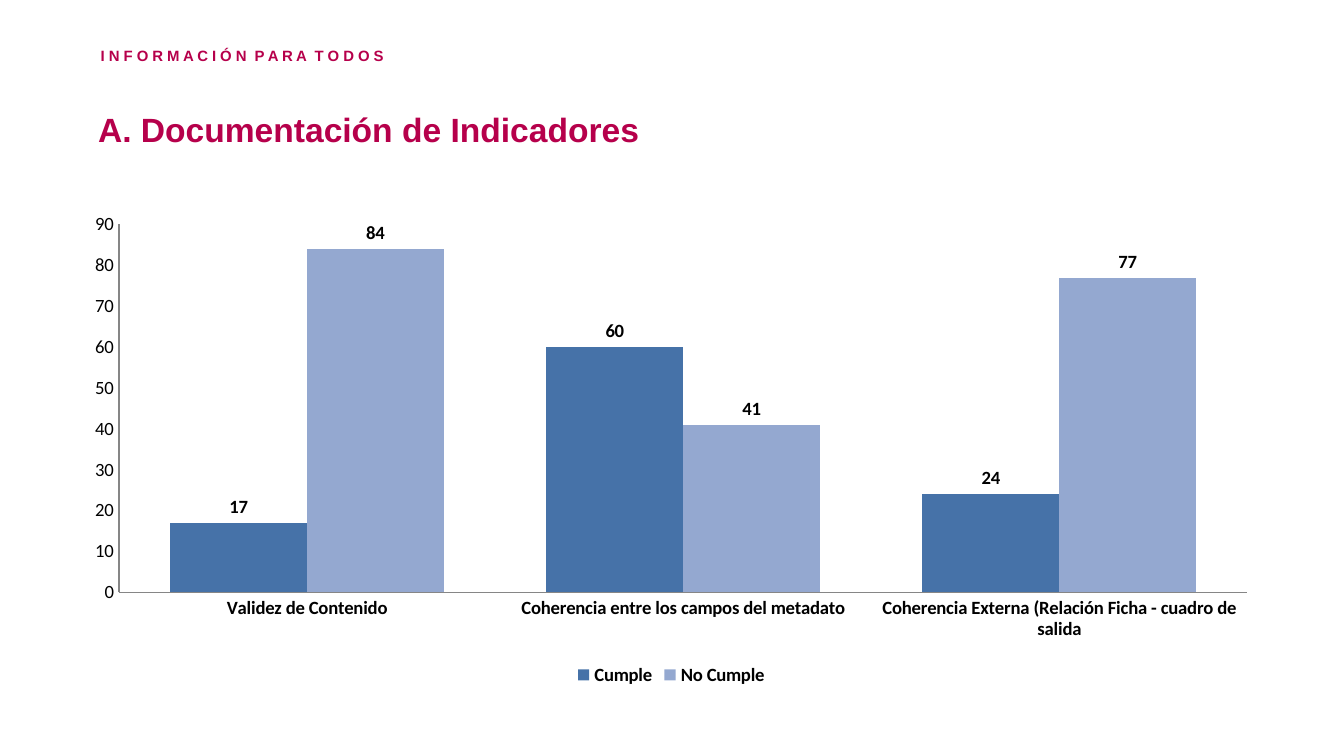
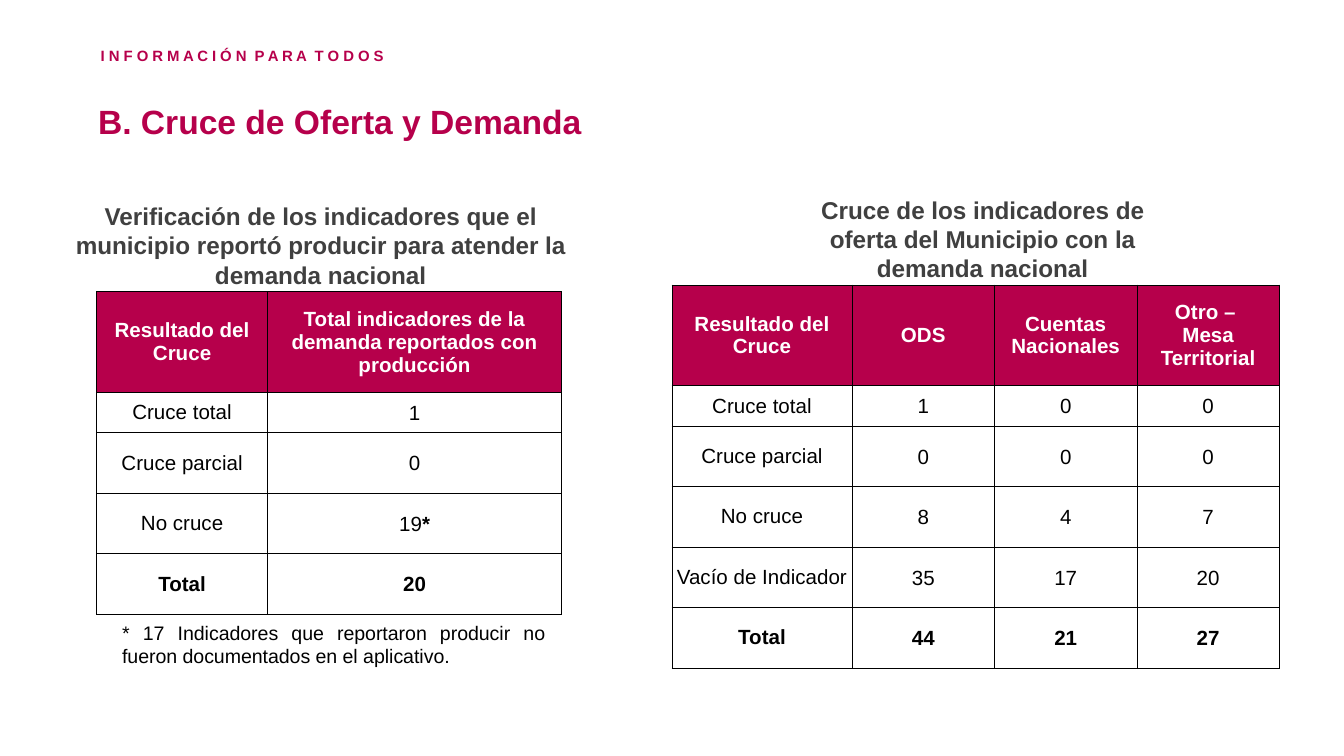
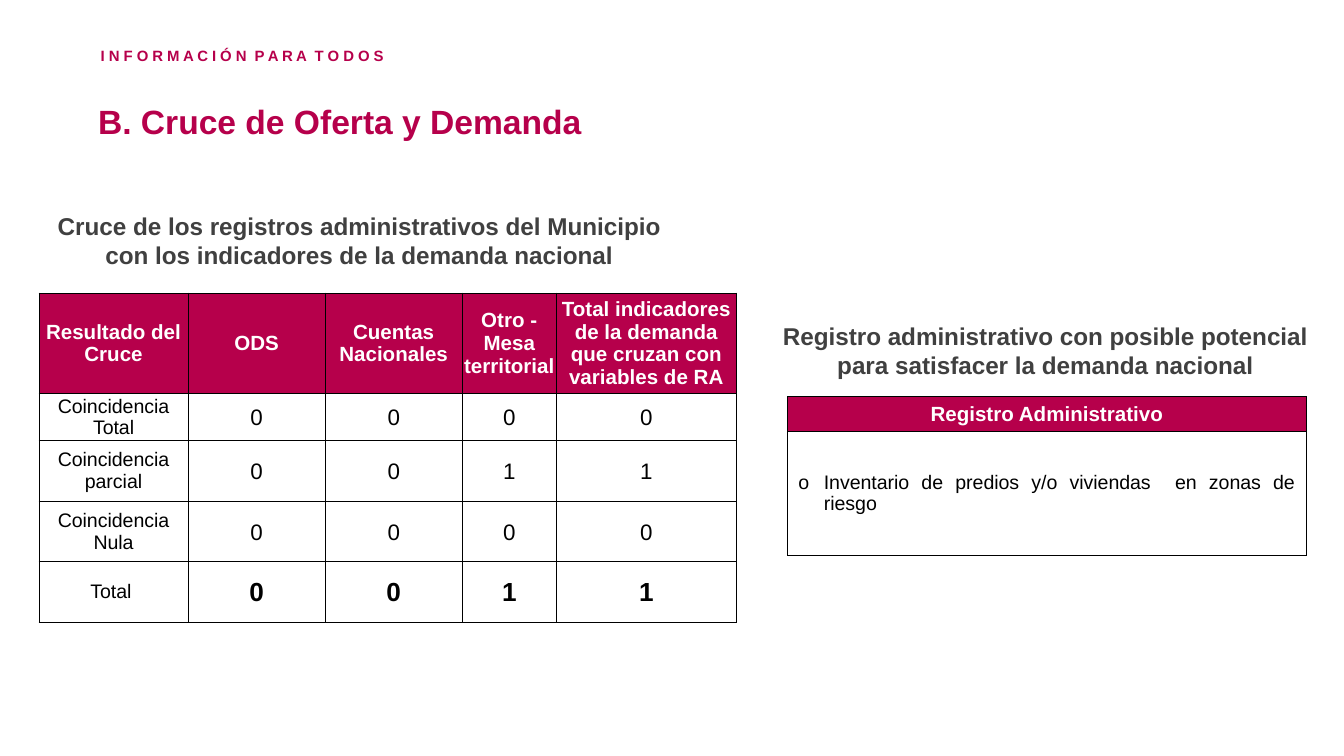
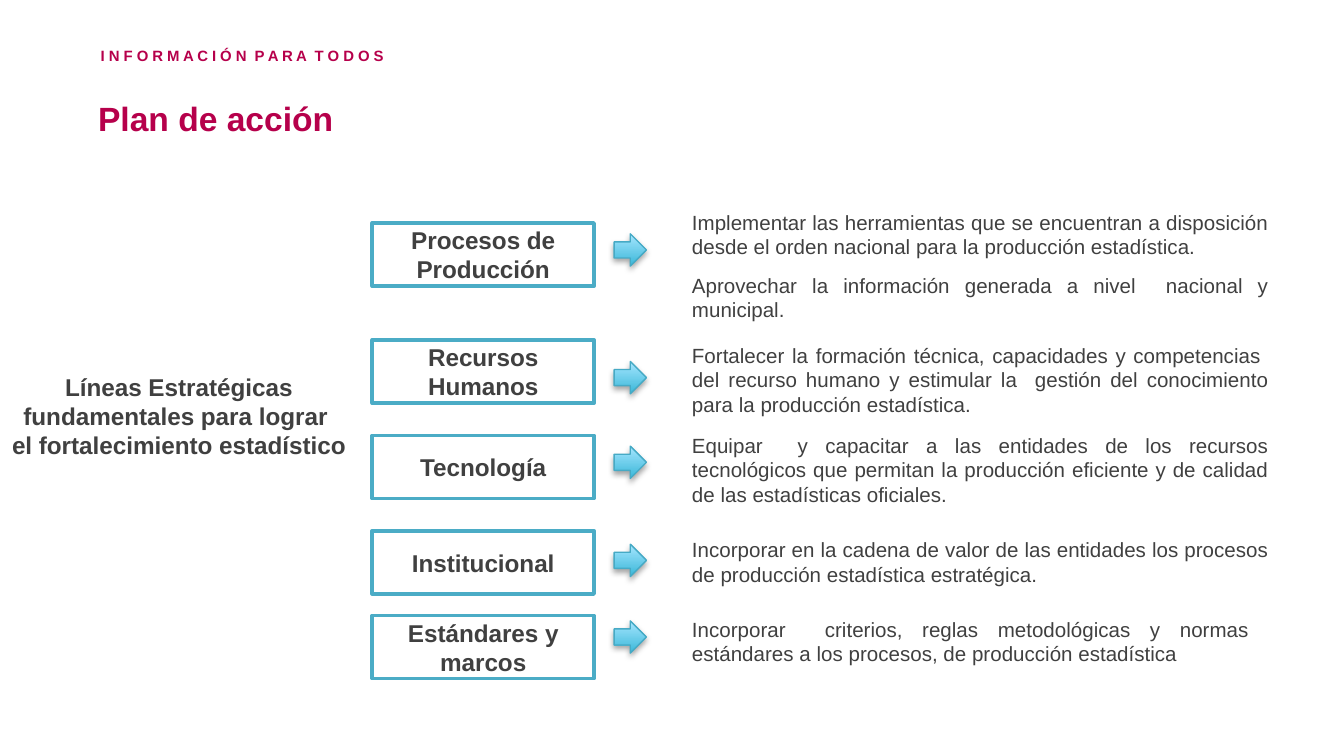
from lxml import etree
from pptx import Presentation
from pptx.chart.data import CategoryChartData
from pptx.dml.color import RGBColor
from pptx.enum.chart import XL_CHART_TYPE, XL_LABEL_POSITION, XL_LEGEND_POSITION, XL_TICK_MARK
from pptx.enum.shapes import MSO_SHAPE
from pptx.enum.text import MSO_ANCHOR, MSO_AUTO_SIZE, PP_ALIGN
from pptx.oxml.ns import qn
from pptx.util import Inches, Pt

# Shared look
CRIMSON, GREY, BLACK, WHITE = "B6004B", "404040", "000000", "FFFFFF"
TEAL, ARROW_LINE, ARROW_DARK, ARROW_LIGHT = "4BACC6", "46AAC5", "39B7D8", "A7E6FF"
BAR_COLORS = ("4672A8", "94A8D0")
FONT, CHART_FONT = "Arial", "Calibri"
LEFT, CENTER, JUSTIFY = PP_ALIGN.LEFT, PP_ALIGN.CENTER, PP_ALIGN.JUSTIFY


def rgb(color):
    return RGBColor.from_string(color)


def add_xml(parent, tag, **attrs):
    return etree.SubElement(parent, qn(tag), {k: str(v) for k, v in attrs.items()})


# Text
def add_run(p, text, size=11, color=BLACK, bold=False, tracking=0):
    r = p.add_run()
    r.text = text
    r.font.name, r.font.size, r.font.bold = FONT, Pt(size), bold
    r.font.color.rgb = rgb(color)
    if tracking:
        r.font._element.set("spc", str(int(tracking * 100)))
    return r


def write(tf, text, align=LEFT, spacing=None, bullet=None, **fmt):
    """Write each line of the text as one paragraph."""
    for i, line in enumerate(text.split("\n")):
        p = tf.add_paragraph() if i else tf.paragraphs[0]
        p.alignment = align
        if spacing:
            p.line_spacing = spacing
        if bullet:
            pPr = p._p.get_or_add_pPr()
            pPr.set("marL", str(Inches(0.19)))
            pPr.set("indent", str(-Inches(0.19)))
            add_xml(pPr, "a:buFont", typeface=FONT)
            add_xml(pPr, "a:buChar", char=bullet)
        add_run(p, line, **fmt)


def set_margins(target, left, top, right, bottom):
    target.margin_left, target.margin_top = Inches(left), Inches(top)
    target.margin_right, target.margin_bottom = Inches(right), Inches(bottom)


def add_text(slide, x, y, w, h, text, margins=(0.1, 0.05, 0.1, 0.05), **fmt):
    tf = slide.shapes.add_textbox(Inches(x), Inches(y), Inches(w), Inches(h)).text_frame
    tf.word_wrap = True
    tf.auto_size = MSO_AUTO_SIZE.SHAPE_TO_FIT_TEXT
    set_margins(tf, *margins)
    write(tf, text, **fmt)


def add_heading(slide, x, y, w, text):
    add_text(slide, x, y, w, 0.76, text, align=CENTER, size=13, color=GREY, bold=True)


def add_titled_slide(prs, title, title_top=0.75):
    slide = prs.slides.add_slide(prs.slide_layouts[6])
    add_text(slide, 0.74, 0.3, 3.07, 0.19, "I N F O R M A C I Ó N  P A R A  T O D O S",
             margins=(0.01, 0.01, 0, 0), align=JUSTIFY, spacing=1.3,
             size=8, color=CRIMSON, bold=True, tracking=-0.05)
    add_text(slide, 0.72, title_top, 6.51, 0.3, title, margins=(0.01, 0, 0, 0),
             size=18, color=CRIMSON, bold=True)
    return slide


# Tables
def set_borders(cell):
    tcPr = cell._tc.get_or_add_tcPr()
    for i, side in enumerate(("a:lnL", "a:lnR", "a:lnT", "a:lnB")):
        ln = etree.Element(qn(side), w=str(Pt(0.5)))
        add_xml(add_xml(ln, "a:solidFill"), "a:srgbClr", val=BLACK)
        tcPr.insert(i, ln)


def fill_cell(cell, text, header=False, margins=(0.01, 0.01, 0.01, 0), **fmt):
    cell.vertical_anchor = MSO_ANCHOR.MIDDLE
    set_margins(cell, *margins)
    if header:
        cell.fill.solid()
        cell.fill.fore_color.rgb = rgb(CRIMSON)
        fmt.update(color=WHITE, bold=True, size=11)
    else:
        cell.fill.background()
    set_borders(cell)
    write(cell.text_frame, text, **{"align": CENTER, **fmt})


def add_grid(slide, x, y, widths, heights):
    table = slide.shapes.add_table(len(heights), len(widths), Inches(x), Inches(y),
                                   Inches(sum(widths)), Inches(sum(heights))).table
    table.first_row = table.horz_banding = False
    for col, w in zip(table.columns, widths):
        col.width = Inches(w)
    for row, h in zip(table.rows, heights):
        row.height = Inches(h)
    return table


def add_results(slide, x, y, widths, data, label_size=11, value_size=11,
                total_size=11, bold_total_label=True):
    """Table with a header row, one label column and a closing total row."""
    last = len(data) - 1
    table = add_grid(slide, x, y, widths, [0.75, 0.3] + [0.45] * (last - 1))
    for r, row in enumerate(data):
        for c, text in enumerate(row):
            size = label_size if c == 0 else total_size if r == last else value_size
            margins = (0, 0, 0, 0) if r == 0 or c == 0 else (0.01, 0.01, 0.01, 0)
            fill_cell(table.cell(r, c), text, header=r == 0, margins=margins, size=size,
                      bold=r == last and (c > 0 or bold_total_label))
    return table


# Chart
def add_columns(slide, x, y, w, h, categories, series):
    data = CategoryChartData()
    data.categories = categories
    for name, values in series:
        data.add_series(name, values)
    chart = slide.shapes.add_chart(XL_CHART_TYPE.COLUMN_CLUSTERED, Inches(x), Inches(y),
                                   Inches(w), Inches(h), data).chart
    chart.has_title = False
    chart.font.name, chart.font.size = CHART_FONT, Pt(10)
    chart.font.color.rgb = rgb(BLACK)
    chart.has_legend = True
    chart.legend.position = XL_LEGEND_POSITION.BOTTOM
    chart.legend.include_in_layout = False
    chart.legend.font.bold = True

    for axis in (chart.category_axis, chart.value_axis):
        axis.has_major_gridlines = False
        axis.major_tick_mark = axis.minor_tick_mark = XL_TICK_MARK.NONE
        axis.format.line.color.rgb = rgb("868686")
    chart.category_axis.tick_labels.font.bold = True
    chart.value_axis.minimum_scale, chart.value_axis.maximum_scale = 0, 90
    chart.value_axis.major_unit = 10

    plot = chart.plots[0]
    plot.gap_width, plot.overlap, plot.vary_by_categories = 75, 0, False
    for s, color in zip(plot.series, BAR_COLORS):
        s.format.fill.solid()
        s.format.fill.fore_color.rgb = rgb(color)
        s.data_labels.show_value = True
        s.data_labels.position = XL_LABEL_POSITION.OUTSIDE_END
        s.data_labels.font.bold = True


# Shapes
def add_box(slide, x, y, w, h, text):
    sp = slide.shapes.add_shape(MSO_SHAPE.RECTANGLE, Inches(x), Inches(y), Inches(w), Inches(h))
    sp.shadow.inherit = False
    sp.fill.solid()
    sp.fill.fore_color.rgb = rgb(WHITE)
    sp.line.color.rgb = rgb(TEAL)
    sp.line.width = Pt(2)
    sp.text_frame.word_wrap = True
    sp.text_frame.vertical_anchor = MSO_ANCHOR.MIDDLE
    write(sp.text_frame, text, align=CENTER, size=13, color=GREY, bold=True)


def add_arrow(slide, x, y, size=0.24):
    sp = slide.shapes.add_shape(MSO_SHAPE.RIGHT_ARROW, Inches(x), Inches(y),
                                Inches(size), Inches(size))
    sp.fill.gradient()
    sp.fill.gradient_angle = 90
    for stop, color in zip(sp.fill.gradient_stops, (ARROW_DARK, ARROW_LIGHT)):
        stop.color.rgb = rgb(color)
    sp.line.color.rgb = rgb(ARROW_LINE)
    sp.line.width = Pt(0.75)
    # Soft shadow below the arrow
    sp.shadow.inherit = False
    effects = sp._element.spPr.find(qn("a:effectLst"))
    shadow = add_xml(effects, "a:outerShdw", blurRad=Pt(3.1), dist=Pt(1.8),
                     dir=5400000, rotWithShape=0)
    add_xml(add_xml(shadow, "a:srgbClr", val=BLACK), "a:alpha", val=35000)


# Slides
def build_documentation(prs):
    slide = add_titled_slide(prs, "A. Documentación de Indicadores", 0.81)
    add_columns(slide, 0.53, 1.52, 8.93, 3.62,
                ("Validez de Contenido", "Coherencia entre los campos del metadato",
                 "Coherencia Externa (Relación Ficha - cuadro de salida"),
                (("Cumple", (17, 60, 24)), ("No Cumple", (84, 41, 77))))


def build_indicator_match(prs):
    slide = add_titled_slide(prs, "B. Cruce de Oferta y Demanda")
    add_heading(slide, 5.99, 1.4, 2.64,
                "Cruce de los indicadores de oferta del Municipio con la demanda nacional")
    add_results(slide, 5, 2.12, [1.34] + [1.06] * 3, (
        ("Resultado del Cruce", "ODS", "Cuentas Nacionales", "Otro – \nMesa Territorial"),
        ("Cruce total", "1", "0", "0"),
        ("Cruce parcial", "0", "0", "0"),
        ("No cruce", "8", "4", "7"),
        ("Vacío de Indicador", "35", "17", "20"),
        ("Total", "44", "21", "27")))
    produced = add_results(slide, 0.72, 2.17, [1.27, 2.19], (
        ("Resultado del Cruce", "Total indicadores de la demanda reportados con producción"),
        ("Cruce total", "1"),
        ("Cruce parcial", "0"),
        ("No cruce", "19"),
        ("Total", "20")))
    add_run(produced.cell(3, 1).text_frame.paragraphs[0], "*", bold=True)
    add_heading(slide, 0.4, 1.45, 3.97, "Verificación de los indicadores que el municipio "
                "reportó producir para atender la demanda nacional")
    add_text(slide, 0.81, 4.57, 3.35, 0.47, "* 17 Indicadores que reportaron producir no "
             "fueron documentados en el aplicativo.", align=JUSTIFY, size=10.5)


def build_register_match(prs):
    slide = add_titled_slide(prs, "B. Cruce de Oferta y Demanda")
    add_heading(slide, 5.52, 2.34, 4.51, "Registro administrativo con posible potencial "
                "para satisfacer la demanda nacional")
    add_heading(slide, 0.2, 1.52, 4.94, "Cruce de los registros administrativos del Municipio "
                "con los indicadores de la demanda nacional")
    add_results(slide, 0.29, 2.18, [1.11, 1.02, 1.02, 0.7, 1.34], (
        ("Resultado del Cruce", "ODS", "Cuentas Nacionales", "Otro - Mesa territorial",
         "Total indicadores de la demanda que cruzan con variables de RA"),
        ("Coincidencia Total", "0", "0", "0", "0"),
        ("Coincidencia parcial", "0", "0", "1", "1"),
        ("Coincidencia Nula", "0", "0", "0", "0"),
        ("Total ", "0", "0", "1", "1")),
        label_size=10.5, value_size=12, total_size=14, bold_total_label=False)
    registers = add_grid(slide, 5.86, 2.95, [3.86], [0.26, 0.92])
    fill_cell(registers.cell(0, 0), "Registro Administrativo", header=True, margins=(0, 0, 0, 0))
    fill_cell(registers.cell(1, 0), "Inventario de predios y/o viviendas  en zonas de riesgo",
              margins=(0.08, 0, 0.08, 0), align=JUSTIFY, bullet="o", size=10.5)


def build_action_plan(prs):
    slide = add_titled_slide(prs, "Plan de acción", 0.73)
    add_heading(slide, -0.02, 2.72, 2.7, "Líneas Estratégicas fundamentales para lograr  "
                "el fortalecimiento estadístico")
    # Strategic lines: name, top of box, top of arrow
    for name, box_top, arrow_top in (("Procesos de Producción", 1.66, 1.74),
                                     ("Recursos Humanos", 2.53, 2.69),
                                     ("Tecnología", 3.24, 3.32),
                                     ("Institucional", 3.95, 4.05),
                                     ("Estándares y marcos", 4.58, 4.62)):
        add_box(slide, 2.77, box_top, 1.65, 0.47, name)
        add_arrow(slide, 4.57, arrow_top)
    # Actions: top, height, text
    for top, height, action in (
            (1.51, 0.47, "Implementar las herramientas que se encuentran a disposición desde "
             "el orden nacional para la producción estadística."),
            (1.98, 0.47, "Aprovechar la información generada a nivel  nacional y municipal."),
            (2.5, 0.66, "Fortalecer la formación técnica, capacidades y competencias  del "
             "recurso humano y estimular la  gestión del conocimiento para la producción "
             "estadística."),
            (3.17, 0.84, "Equipar  y capacitar a las entidades de los recursos tecnológicos "
             "que permitan la producción eficiente y de calidad de las estadísticas oficiales."),
            (3.95, 0.66, "Incorporar en la cadena de valor de las entidades los procesos de "
             "producción estadística estratégica."),
            (4.54, 0.66, "Incorporar  criterios, reglas metodológicas y normas  estándares a "
             "los procesos, de producción estadística ")):
        add_text(slide, 5.05, top, 4.49, height, action, align=JUSTIFY, size=11, color=GREY)


def main():
    prs = Presentation()
    # Widescreen, 16:9
    prs.slide_width = Inches(10)
    prs.slide_height = Inches(10) * 9 // 16
    build_documentation(prs)
    build_indicator_match(prs)
    build_register_match(prs)
    build_action_plan(prs)
    prs.save("out.pptx")


if __name__ == "__main__":
    main()
